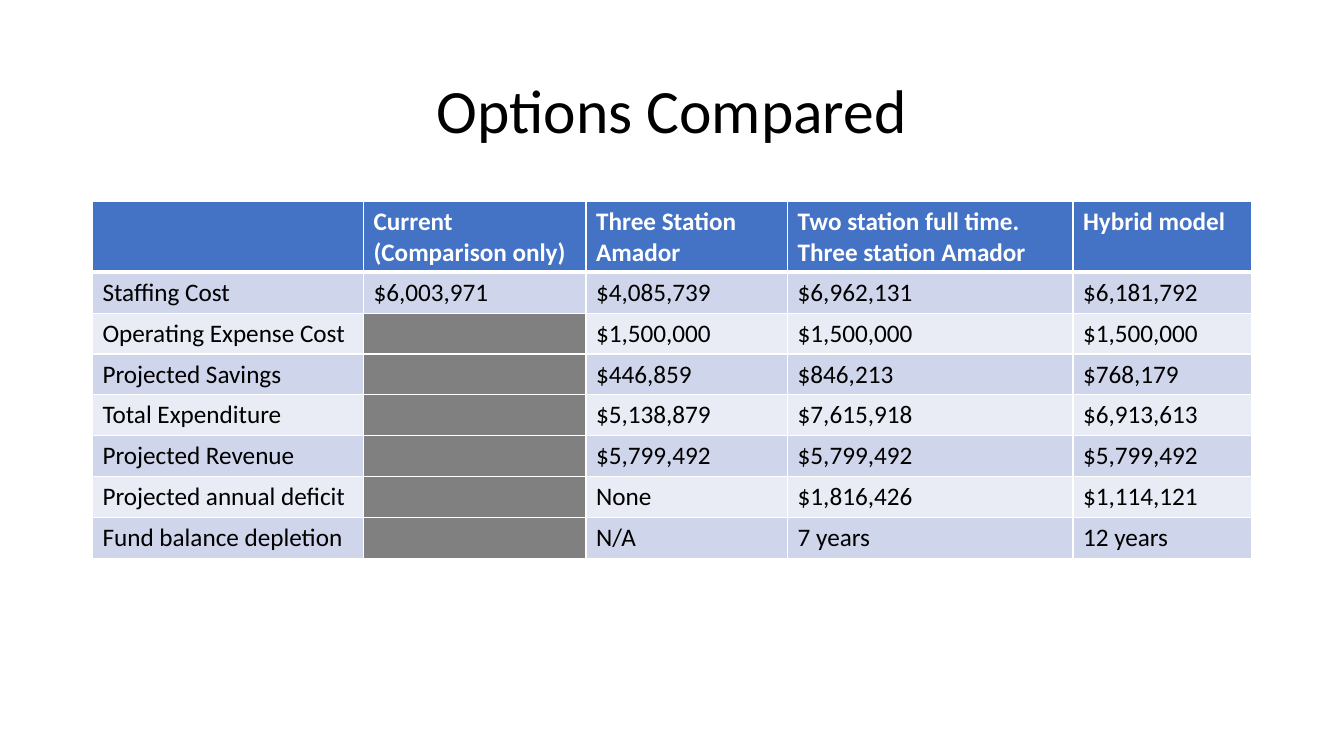
import pptx
import pptx.dml.color
import pptx.enum.text
import pptx.oxml.ns
import pptx.util
from lxml import etree
from pptx.util import Cm

FONT = "Calibri"
COLORS = {
    "header": "4472C4",
    "odd": "CFD5EA",
    "even": "E9EBF5",
    "unused": "808080",
    "light": "FFFFFF",
    "dark": "000000",
}
COLUMN_WIDTHS = [6.83, 5.61, 5.08, 7.19, 4.5]
HEADER_HEIGHT = 1.78
ROW_HEIGHT = 1.03
ROWS = [
    ["", "Current (Comparison only)", "Three Station Amador",
     "Two station full time. Three station Amador", "Hybrid model"],
    ["Staffing Cost", "$6,003,971", "$4,085,739", "$6,962,131", "$6,181,792"],
    ["Operating Expense Cost", "", "$1,500,000", "$1,500,000", "$1,500,000"],
    ["Projected Savings", "", "$446,859", "$846,213", "$768,179"],
    ["Total Expenditure", "", "$5,138,879", "$7,615,918", "$6,913,613"],
    ["Projected Revenue", "", "$5,799,492", "$5,799,492", "$5,799,492"],
    ["Projected annual deficit", "", "None", "$1,816,426", "$1,114,121"],
    ["Fund balance depletion", "", "N/A", "7 years", "12 years"],
]


def color(name):
    """Return the named colour."""
    return pptx.dml.color.RGBColor.from_string(COLORS[name])


def write(frame, text, size=18, ink="dark", bold=False, align=None, spacing=None):
    """Write one formatted paragraph into a text frame."""
    para = frame.paragraphs[0]
    para.alignment = align
    para.line_spacing = spacing
    para.font.size = pptx.util.Pt(size)
    if text:
        span = para.add_run()
        span.text = text
        span.font.name = FONT
        span.font.size = pptx.util.Pt(size)
        span.font.bold = bold
        span.font.color.rgb = color(ink)


def add_title(page, text):
    """Add the centred slide title."""
    box = page.shapes.add_textbox(Cm(2.33), Cm(1.01), Cm(29.21), Cm(3.68))
    frame = box.text_frame
    frame.word_wrap = True
    frame.vertical_anchor = pptx.enum.text.MSO_ANCHOR.MIDDLE
    write(frame, text, size=44, align=pptx.enum.text.PP_ALIGN.CENTER, spacing=0.9)


def add_borders(cell, top, bottom):
    """Draw white borders round a cell, with top and bottom widths in points."""
    properties = cell._tc.get_or_add_tcPr()
    for side, width in (("L", 1), ("R", 1), ("T", top), ("B", bottom)):
        line = etree.SubElement(properties, pptx.oxml.ns.qn(f"a:ln{side}"),
                                w=str(pptx.util.Pt(width)))
        fill = etree.SubElement(line, pptx.oxml.ns.qn("a:solidFill"))
        etree.SubElement(fill, pptx.oxml.ns.qn("a:srgbClr"), val=COLORS["light"])


def cell_fill(row, text):
    """Choose a fill name from the row number and whether the cell is empty."""
    if row == 0:
        return "header"
    if not text:
        return "unused"
    return "odd" if row % 2 else "even"


def add_comparison(page, rows):
    """Add the table that compares the options."""
    height = HEADER_HEIGHT + ROW_HEIGHT * (len(rows) - 1)
    table = page.shapes.add_table(len(rows), len(COLUMN_WIDTHS), Cm(2.33), Cm(5.08),
                                  Cm(sum(COLUMN_WIDTHS)), Cm(height)).table
    for column, width in zip(table.columns, COLUMN_WIDTHS):
        column.width = Cm(width)
    for number, texts in enumerate(rows):
        header = number == 0
        table.rows[number].height = Cm(HEADER_HEIGHT if header else ROW_HEIGHT)
        for cell, text in zip(table.rows[number].cells, texts):
            add_borders(cell, top=3 if number == 1 else 1, bottom=3 if header else 1)
            cell.fill.solid()
            cell.fill.fore_color.rgb = color(cell_fill(number, text))
            write(cell.text_frame, text, ink="light" if header else "dark", bold=header)


def main():
    """Build the deck and save it."""
    deck = pptx.Presentation()
    deck.slide_width, deck.slide_height = Cm(33.87), Cm(19.05)
    page = deck.slides.add_slide(deck.slide_layouts[6])
    add_title(page, "Options Compared")
    add_comparison(page, ROWS)
    deck.save("out.pptx")


if __name__ == "__main__":
    main()
